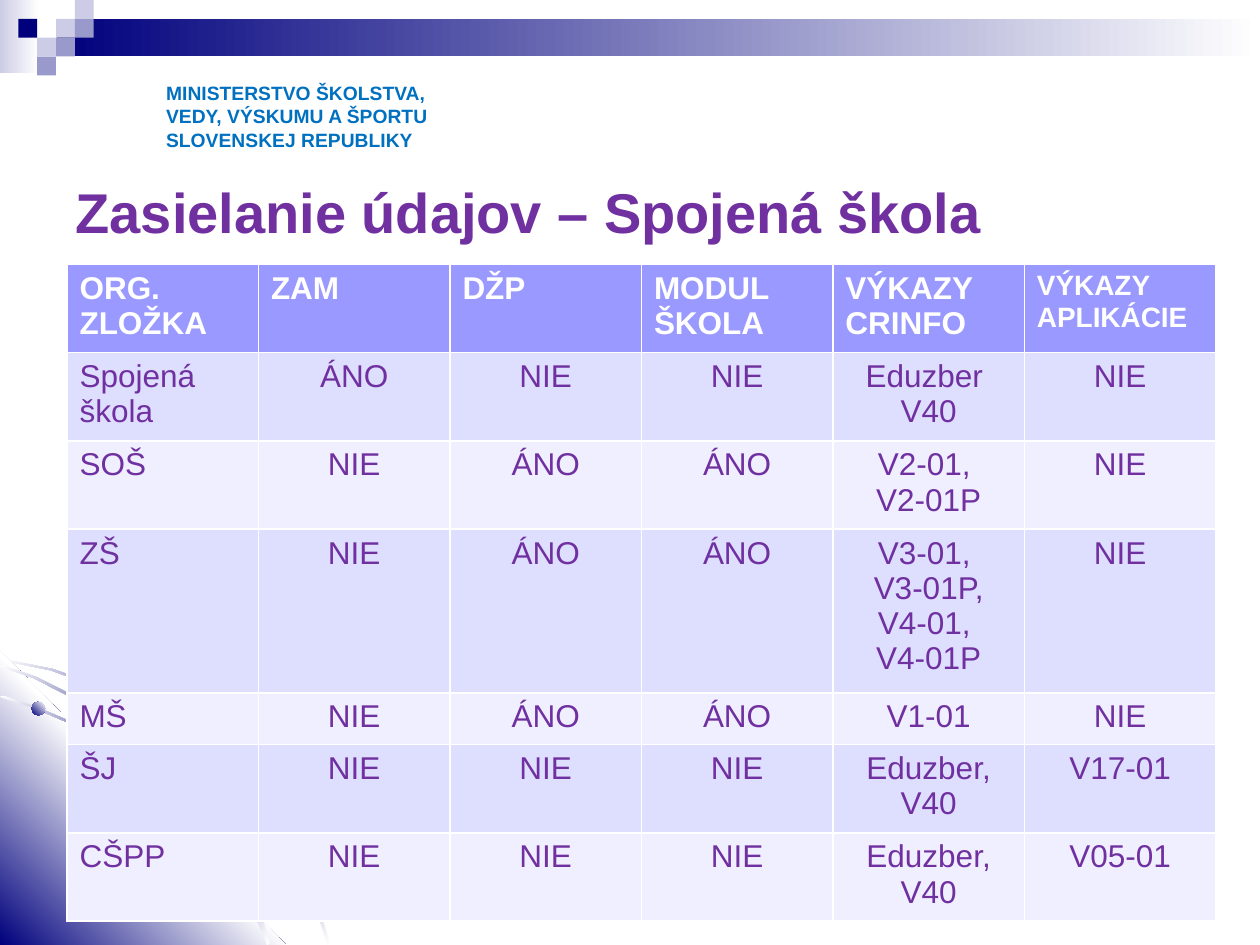
from lxml import etree
from pptx import Presentation
from pptx.dml.color import RGBColor as RGB
from pptx.enum.shapes import MSO_SHAPE as Kind
from pptx.enum.text import MSO_ANCHOR as Anchor, MSO_AUTO_SIZE as Fit, PP_ALIGN as Align
from pptx.oxml import parse_xml
from pptx.oxml.ns import nsdecls
from pptx.util import Cm, Pt

HUES = {
    "navy": "00007D", "pale": "CCCCE6", "mid": "9999CC", "white": "FFFFFF",
    "blue": "0070C0", "violet": "7030A0",
    "head": "9999FF", "odd": "DEDEFF", "even": "EFEFFF",
}
FONT = "Arial"
UNIT = Cm(0.0254)  # grid of the curve points

TILES = [(1, 0, "pale"), (0, 1, "navy"), (2, 1, "pale"), (3, 1, "mid"),
         (3, 0, "pale"), (1, 2, "pale"), (2, 2, "mid"), (1, 3, "mid")]
TILES = TILES[1:]

ARCS = {
    "outer": [(0, 524), (20, 528), (40, 532), (68, 542), (95, 553), (122, 569),
              (147, 586), (170, 605), (191, 627), (210, 651), (228, 677),
              (238, 695), (247, 713), (254, 731), (260, 750)],
    "inner": [(0, 553), (27, 562), (55, 574), (81, 590), (106, 606), (129, 626),
              (150, 648), (170, 672), (187, 698), (201, 724), (207, 737), (212, 750)],
    "middle": [(0, 529), (26, 538), (52, 551), (77, 565), (100, 583), (122, 602),
               (143, 623), (160, 646), (178, 671), (188, 690), (198, 710),
               (206, 730), (212, 749)],
}

HEADS = ["ORG. ZLOŽKA", "ZAM", "DŽP", "MODUL ŠKOLA", "VÝKAZY\nCRINFO", "VÝKAZY APLIKÁCIE"]
ROWS = [
    ["Spojená škola", "ÁNO", "NIE", "NIE", "Eduzber \nV40", "NIE"],
    ["SOŠ", "NIE", "ÁNO", "ÁNO", "V2-01, \nV2-01P", "NIE"],
    ["ZŠ", "NIE", "ÁNO", "ÁNO", "V3-01, \nV3-01P, V4-01, \nV4-01P", "NIE"],
    ["MŠ", "NIE", "ÁNO", "ÁNO", "V1-01", "NIE"],
    ["ŠJ", "NIE", "NIE", "NIE", "Eduzber, V40", "V17-01"],
    ["CŠPP", "NIE", "NIE", "NIE", "Eduzber, V40", "V05-01"],
]


def paint(shape, *hues, angle=0):
    """Fill without outline: one hue is solid, more make a linear gradient."""
    shape.shadow.inherit = False
    shape.line.fill.background()
    if len(hues) == 1:
        shape.fill.solid()
        shape.fill.fore_color.rgb = RGB.from_string(HUES[hues[0]])
        return
    step = 100000 // (len(hues) - 1)
    stops = "".join(f'<a:gs pos="{i * step}"><a:srgbClr val="{HUES[hue]}"/></a:gs>'
                    for i, hue in enumerate(hues))
    grad = parse_xml(f'<a:gradFill {nsdecls("a")} rotWithShape="1"><a:gsLst>{stops}</a:gsLst>'
                     f'<a:lin ang="{angle * 60000}" scaled="0"/></a:gradFill>')
    shape.fill.background()
    props = shape.element.spPr
    old = props.find(etree.QName(grad).text.replace("gradFill", "noFill"))
    props.replace(old, grad)


def style(frame, size, hue, bold=False, align=Align.LEFT):
    for para in frame.paragraphs:
        para.alignment = align
        for run in para.runs:
            font = run.font
            font.name, font.size, font.bold = FONT, Pt(size), bold
            font.color.rgb = RGB.from_string(HUES[hue])


def add_banner(shapes, left, top, width):
    edge = shapes.add_shape(Kind.RECTANGLE, left, top, Cm(0.79), Cm(1.47))
    paint(edge, "pale", "white")
    start = left + Cm(1.14)
    bar = shapes.add_shape(Kind.RECTANGLE, start, top + Cm(0.38), width - start, Cm(0.76))
    paint(bar, "navy", "white")
    side = Cm(0.38)
    for col, row, hue in TILES:
        tile = shapes.add_shape(Kind.RECTANGLE, left + Cm(0.37) + col * side,
                                top + row * side, side, side)
        paint(tile, hue)


def add_free(shapes, points):
    pen = shapes.build_freeform(*points[0], scale=UNIT)
    pen.add_line_segments(points[1:], close=True)
    return pen.convert_to_shape()


def add_arc(shapes, name):
    """Draw a thin ribbon along the named arc."""
    points = ARCS[name]
    back = [(x + 2, y - 1) for x, y in reversed(points)]
    paint(add_free(shapes, points + back), "white", "navy", "white", angle=45)


def add_orbit(shapes, left, top):
    add_arc(shapes, "outer")
    wedge = add_free(shapes, [(227, 750), (0, 750), (0, 516)])
    paint(wedge, "navy", "white", "navy", angle=315)
    add_arc(shapes, "inner")
    add_arc(shapes, "middle")
    for x, y, size, angle in [(0.64, 1.04, 0.27, 315), (4.78, 4.57, 0.29, 45),
                              (2.46, 0.86, 0.38, 315)]:
        dot = shapes.add_shape(Kind.OVAL, left + Cm(x), top + Cm(y), Cm(size), Cm(size))
        paint(dot, "navy", "white", angle=angle)


def add_office(shapes, left, top, width, height):
    frame = shapes.add_textbox(left, top, width, height).text_frame
    frame.word_wrap = True
    frame.text = "MINISTERSTVO ŠKOLSTVA,\nVEDY, VÝSKUMU A ŠPORTU\nSLOVENSKEJ REPUBLIKY"
    style(frame, 11, "blue", bold=True)


def set_title(title, left, top, width, height):
    title.left, title.top, title.width, title.height = left, top, width, height
    frame = title.text_frame
    frame.text = "Zasielanie údajov – Spojená škola"
    frame.auto_size = Fit.NONE
    frame.vertical_anchor = Anchor.TOP
    frame.margin_top = Cm(0.25)
    style(frame, 32, "violet", bold=True)


def add_grid(shapes, left, top, width, height):
    count = len(HEADS)
    table = shapes.add_table(len(ROWS) + 1, count, left, top, width, height).table
    for r, texts in enumerate([HEADS] + ROWS):
        for c, text in enumerate(texts):
            cell = table.cell(r, c)
            cell.text_frame.text = text
            hue = "head" if r == 0 else "odd" if r % 2 else "even"
            cell.fill.solid()
            cell.fill.fore_color.rgb = RGB.from_string(HUES[hue])
            if r == 0:
                style(cell.text_frame, 16 if c == count - 1 else 18, "white", bold=True)
            else:
                style(cell.text_frame, 18, "violet", align=Align.CENTER if c else Align.LEFT)


def main():
    deck = Presentation()
    deck.slide_width, deck.slide_height = Cm(25.4), Cm(19.05)
    slide = deck.slides.add_slide(deck.slide_layouts[5])
    shapes = slide.shapes
    add_banner(shapes, 0, 0, deck.slide_width)
    add_orbit(shapes, 0, Cm(13.11))
    add_office(shapes, Cm(3.1), Cm(1.52), Cm(6.2), Cm(1.68))
    set_title(shapes.title, Cm(1.27), Cm(3.33), Cm(22.86), Cm(2.59))
    add_grid(shapes, Cm(1.35), Cm(5.33), Cm(23.16), Cm(7.29))
    deck.save("out.pptx")


if __name__ == "__main__":
    main()
